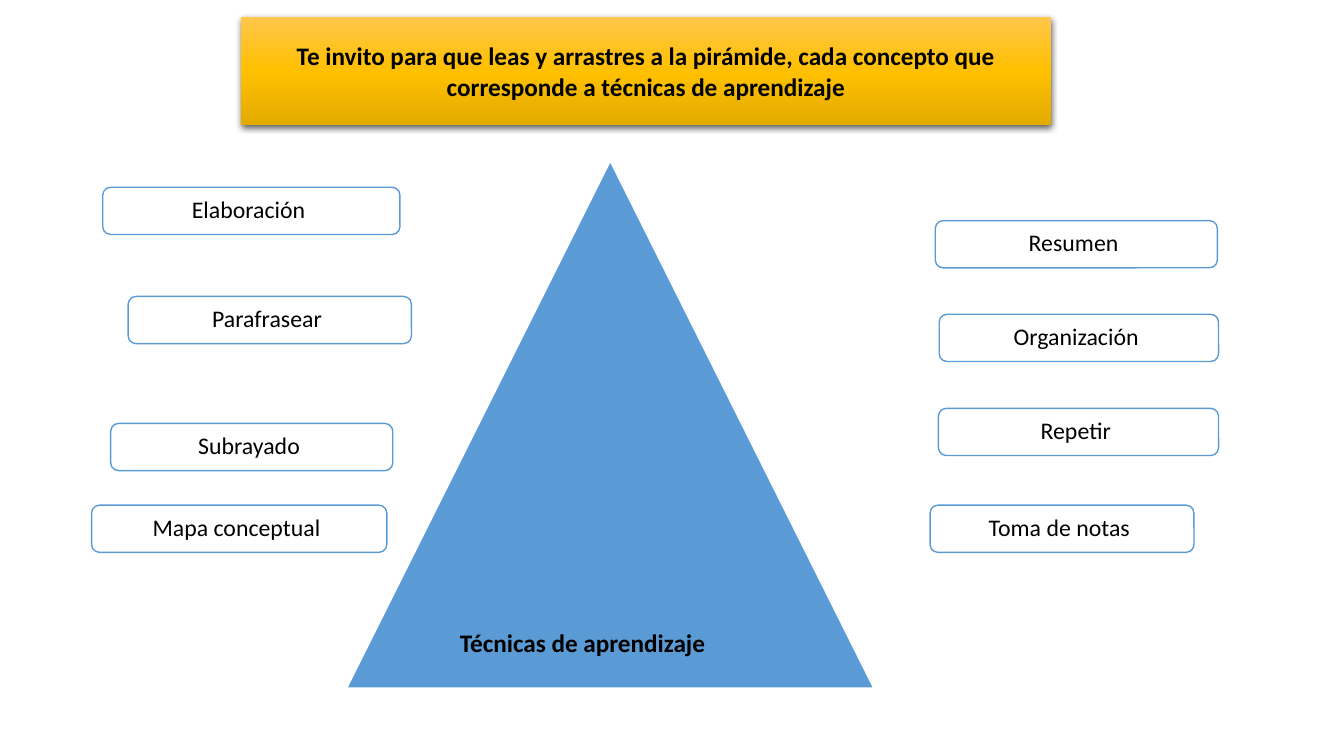
from dataclasses import dataclass

from lxml.etree import SubElement
from pptx import Presentation
from pptx.dml.color import RGBColor
from pptx.enum.shapes import MSO_SHAPE as Shape
from pptx.enum.text import MSO_ANCHOR as Anchor, MSO_AUTO_SIZE as AutoSize, PP_ALIGN as Align
from pptx.oxml.ns import qn
from pptx.util import Cm, Pt


@dataclass(frozen=True)
class Theme:
    font: str = "Calibri"
    ink: str = "000000"
    paper: str = "FFFFFF"
    blue: str = "5B9BD5"
    gold: tuple = ((0, "FFC64B"), (50, "FFC000"), (100, "E3AB00"))
    concept_size: float = 17
    heading_size: float = 18


def write(shape, text, *, theme, size, bold=False, spacing=1.0, inset=(0.25, 0.13), wrap=True):
    frame = shape.text_frame
    frame.word_wrap = wrap
    frame.vertical_anchor = Anchor.MIDDLE
    frame.margin_left = frame.margin_right = Cm(inset[0])
    frame.margin_top = frame.margin_bottom = Cm(inset[1])
    paragraph = frame.paragraphs[0]
    paragraph.alignment = Align.CENTER
    paragraph.line_spacing = spacing
    run = paragraph.add_run()
    run.text = text
    run.font.name = theme.font
    run.font.size = Pt(size)
    run.font.bold = bold
    run.font.color.rgb = RGBColor.from_string(theme.ink)


class PyramidSlide:
    def __init__(self, slide, theme):
        self.slide = slide
        self.theme = theme

    def outline(self, kind, box, fill, line):
        shape = self.slide.shapes.add_shape(kind, *map(Cm, box))
        shape.shadow.inherit = False
        shape.fill.solid()
        shape.fill.fore_color.rgb = RGBColor.from_string(fill)
        shape.line.color.rgb = RGBColor.from_string(line)
        shape.line.width = Pt(1)
        return shape

    def pyramid(self, box):
        self.outline(Shape.ISOSCELES_TRIANGLE, box, self.theme.blue, self.theme.paper)

    def concept(self, text, left, top, width, height=1.19):
        box = (left, top, width, height)
        shape = self.outline(Shape.ROUNDED_RECTANGLE, box, self.theme.paper, self.theme.blue)
        color = shape.fill._xPr.find(qn("a:solidFill")).find(qn("a:srgbClr"))
        SubElement(color, qn("a:alpha"), val="90000")
        write(shape, text, theme=self.theme, size=self.theme.concept_size,
              spacing=0.9, inset=(0.18, 0.18))

    def banner(self, text, box):
        shape = self.slide.shapes.add_shape(Shape.RECTANGLE, *map(Cm, box))
        shape.line.fill.background()
        shape.fill.gradient()
        shape.fill.gradient_angle = 270
        properties = shape.element.spPr
        stops = properties.find(".//" + qn("a:gsLst"))
        stops.clear()
        for position, color in self.theme.gold:
            stop = SubElement(stops, qn("a:gs"), pos=str(position * 1000))
            SubElement(stop, qn("a:srgbClr"), val=color)
        shape.shadow.inherit = False
        shadow = SubElement(properties.find(qn("a:effectLst")), qn("a:outerShdw"),
                            blurRad=str(Pt(4.5)), dist=str(Pt(1.5)), dir="5400000",
                            algn="ctr", rotWithShape="0")
        color = SubElement(shadow, qn("a:srgbClr"), val=self.theme.ink)
        SubElement(color, qn("a:alpha"), val="63000")
        write(shape, text, theme=self.theme, size=self.theme.heading_size, bold=True)

    def caption(self, text, box):
        shape = self.slide.shapes.add_textbox(*map(Cm, box))
        write(shape, text, theme=self.theme, size=self.theme.heading_size, bold=True, wrap=False)
        shape.text_frame.auto_size = AutoSize.SHAPE_TO_FIT_TEXT


CONCEPTS = (
    ("Resumen ", 23.57, 5.56, 7.11),
    ("Organización ", 23.67, 7.92, 7.04),
    ("Elaboración ", 2.59, 4.72, 7.49),
    ("Repetir ", 23.65, 10.29, 7.06),
    ("Toma de notas ", 23.44, 12.73, 6.65),
    ("Mapa conceptual ", 2.31, 12.73, 7.44),
    ("Parafrasear ", 3.23, 7.47, 7.14),
    ("Subrayado ", 2.79, 10.67, 7.11),
)


def main():
    presentation = Presentation()
    presentation.slide_width = Cm(33.87)
    presentation.slide_height = Cm(19.05)
    slide = presentation.slides.add_slide(presentation.slide_layouts[6])
    page = PyramidSlide(slide, Theme())
    page.pyramid((8.74, 4.06, 13.28, 13.28))
    for concept in CONCEPTS:
        page.concept(*concept)
    page.banner("Te invito para que leas y arrastres a la pirámide, cada concepto que "
                "corresponde a técnicas de aprendizaje", (6.07, 0.43, 20.42, 2.72))
    page.caption("Técnicas de aprendizaje", (11.33, 15.67, 6.71, 1.02))
    presentation.save("out.pptx")


if __name__ == "__main__":
    main()
